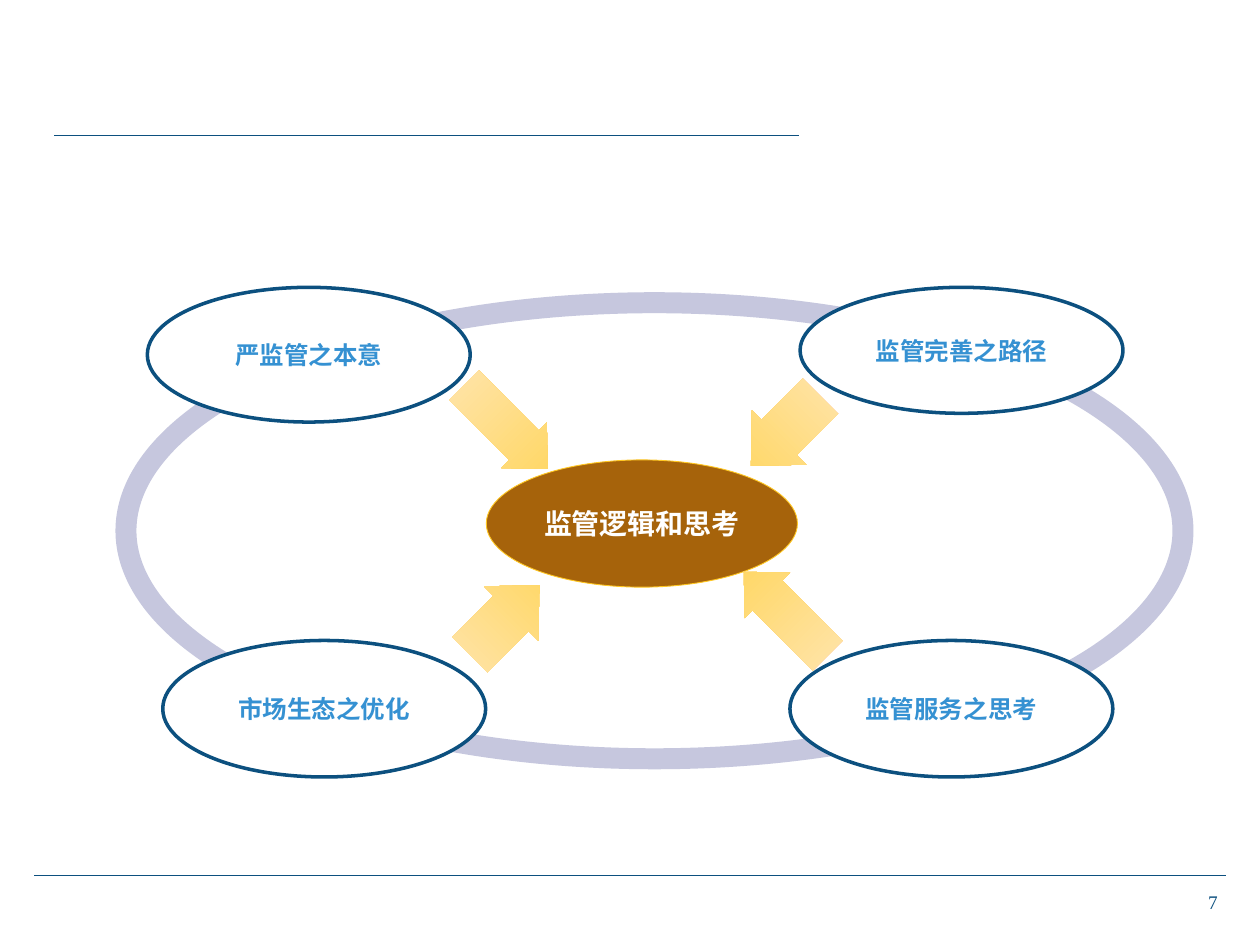
"""Build the slide on regulatory logic: four themes pointing at one centre."""
from lxml import etree
from pptx import Presentation
from pptx.dml import color
from pptx.enum import shapes, text
from pptx.oxml import ns
from pptx.util import Pt

COLORS = {
    "navy": "0C507F", "blue": "3591D2", "white": "FFFFFF", "ring": "C6C7DE",
    "brown": "A6630B", "gold": "FFC722", "tip": "FFD55A", "tail": "FFE5AF",
}


def rgb(name):
    return color.RGBColor.from_string(COLORS[name])


def add_ellipse(box, fill, line, weight, label="", size=14, ink="blue"):
    s = slide.shapes.add_shape(shapes.MSO_SHAPE.OVAL, *map(Pt, box))
    s.shadow.inherit = False
    if fill:
        s.fill.solid()
        s.fill.fore_color.rgb = rgb(fill)
    else:
        s.fill.background()
    s.line.color.rgb = rgb(line)
    s.line.width = Pt(weight)
    if label:
        tf = s.text_frame
        tf.margin_left = tf.margin_right = tf.margin_top = tf.margin_bottom = 0
        tf.vertical_anchor = text.MSO_ANCHOR.MIDDLE
        p = tf.paragraphs[0]
        p.alignment = text.PP_ALIGN.CENTER
        r = p.add_run()
        r.text = label
        r.font.name = "Arial"
        r.font.size = Pt(size)
        r.font.bold = True
        r.font.color.rgb = rgb(ink)


prs = Presentation()
prs.slide_width, prs.slide_height = Pt(720), Pt(540)
slide = prs.slides.add_slide(prs.slide_layouts[6])

for x1, x2, y in [(19.6, 700.4, 500.2), (31, 456.5, 77.2)]:
    s = slide.shapes.add_connector(
        shapes.MSO_CONNECTOR.STRAIGHT, Pt(x1), Pt(y), Pt(x2), Pt(y))
    s.line.color.rgb = rgb("navy")
    s.line.width = Pt(0.5)
    etree.SubElement(s._element.spPr, ns.qn("a:effectLst"))

add_ellipse((72, 173, 604, 260.6), None, "ring", 12)
add_ellipse((277.9, 262.8, 177.8, 72.7), "brown", "gold", 0.5,
            "监管逻辑和思考", 16, "white")

arrows = [
    (427, 218.2, 43.9, 56.2, 225),
    (270.7, 210.2, 36.7, 67.7, 135),
    (430.6, 316.8, 36.7, 67.7, 315),
    (266.4, 326.2, 43.9, 56.2, 45),
]
for *box, angle in arrows:
    s = slide.shapes.add_shape(shapes.MSO_SHAPE.UP_ARROW, *map(Pt, box))
    s.shadow.inherit = False
    s.rotation = angle
    s.adjustments[0], s.adjustments[1] = 0.65, 0.52
    s.line.fill.background()
    s.fill.gradient()
    s.fill.gradient_angle = 270
    for stop, name, position in zip(s.fill.gradient_stops, ("tip", "tail"), (0, 1)):
        stop.color.rgb = rgb(name)
        stop.position = position

themes = [
    ("严监管之本意", 84.2, 164.2, 77),
    ("监管完善之路径", 457.2, 164.2, 72),
    ("市场生态之优化", 93, 366, 78),
    ("监管服务之思考", 451.4, 366, 78),
]
for label, x, y, height in themes:
    add_ellipse((x, y, 184.5, height), "white", "navy", 2, label)

s = slide.shapes.add_textbox(Pt(683.3), Pt(505.4), Pt(23), Pt(20.9))
tf = s.text_frame
tf.word_wrap = True
r = tf.paragraphs[0].add_run()
r.text = "7"
r.font.name = "Times New Roman"
r.font.size = Pt(11)
r.font.color.rgb = rgb("navy")

prs.save("out.pptx")
